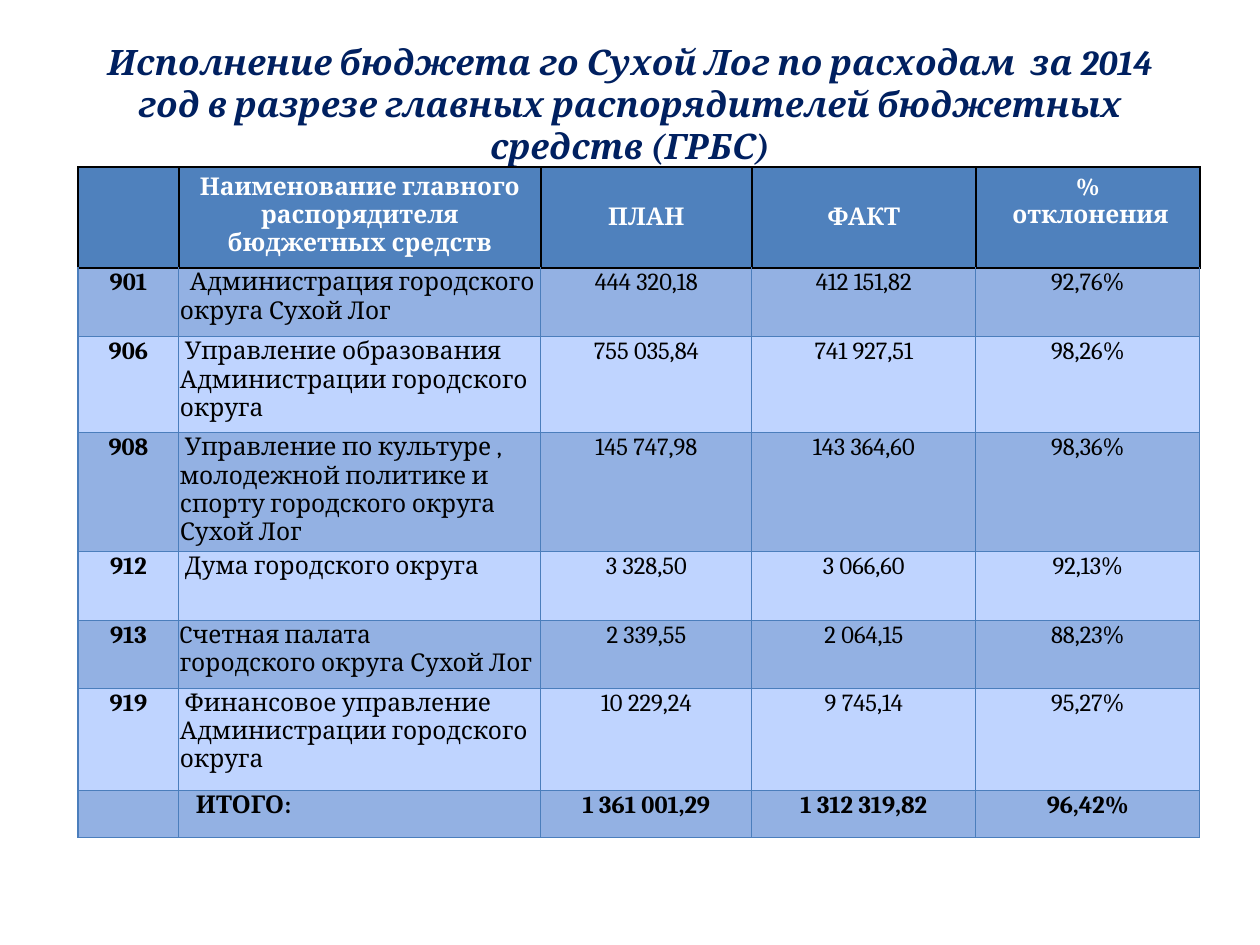
"""Build the slide on budget execution by chief budget administrators."""
import pptx
import pptx.dml.color
import pptx.enum.text
import pptx.oxml
import pptx.oxml.ns
import pptx.util

PX = 914400 // 126
COLORS = {
    "title": "002060", "header": "4F81BD", "band": "93B1E3", "plain": "BFD4FF",
    "white": "FFFFFF", "text": "000000", "grid": "4B7EBC", "header_grid": "000000",
}
CENTER = pptx.enum.text.PP_ALIGN.CENTER
LEFT = pptx.enum.text.PP_ALIGN.LEFT
TOP = pptx.enum.text.MSO_ANCHOR.TOP
MIDDLE = pptx.enum.text.MSO_ANCHOR.MIDDLE

TITLE = ("Исполнение бюджета го Сухой Лог по расходам  за 2014 год "
         "в разрезе главных распорядителей бюджетных средств (ГРБС)")
HEADINGS = ["", "Наименование главного распорядителя бюджетных средств",
            "ПЛАН", "ФАКТ", "%\n отклонения"]
ADMINISTRATORS = [
    ("901", "Администрация городского округа Сухой Лог",
     "444 320,18", "412 151,82", "92,76%"),
    ("906", "Управление образования Администрации городского округа",
     "755 035,84", "741 927,51", "98,26%"),
    ("908", "Управление по культуре , молодежной политике и спорту "
            "городского округа Сухой Лог",
     "145 747,98", "143 364,60", "98,36%"),
    ("912", "Дума городского округа", "3 328,50", "3 066,60", "92,13%"),
    ("913", "Cчетная палата\nгородского округа Сухой Лог",
     "2 339,55", "2 064,15", "88,23%"),
    ("919", "Финансовое управление Администрации городского округа",
     "10 229,24", "9 745,14", "95,27%"),
    ("", "ИТОГО:", "1 361 001,29", "1 312 319,82", "96,42%"),
]
NAME_INDENTS = [10, 5, 5, 5, 0, 5, 16]
COLUMN_WIDTHS = [101, 362, 211, 224, 224]
ROW_HEIGHTS = [97, 69, 96, 115, 69, 68, 102, 47]


def px(length):
    """Turn pixels into EMU."""
    return pptx.util.Emu(length * PX)


def rgb(name):
    """Return a named colour."""
    return pptx.dml.color.RGBColor.from_string(COLORS[name])


def apply(target, values):
    """Set each attribute of the target from a dict."""
    for name, value in values.items():
        setattr(target, name, value)


def write(frame, text, color, align, indent=0, **font):
    """Write text into a frame, one paragraph a line."""
    frame.text = text
    for paragraph in frame.paragraphs:
        paragraph.alignment = align
        if indent:
            paragraph._p.get_or_add_pPr().set("indent", str(px(indent)))
        for run in paragraph.runs:
            apply(run.font, {"name": "Cambria", **font})
            run.font.color.rgb = rgb(color)


def border(cell, side, color, points):
    """Draw one border line of a cell."""
    line = pptx.oxml.parse_xml(
        f'<a:ln{side} {pptx.oxml.ns.nsdecls("a")} w="{pptx.util.Pt(points)}">'
        f'<a:solidFill><a:srgbClr val="{COLORS[color]}"/></a:solidFill></a:ln{side}>')
    cell._tc.get_or_add_tcPr().append(line)


def style_cell(cell, fill, grid, top_grid, **layout):
    """Set the borders, fill and text layout of a cell."""
    for side in "LRTB":
        color = top_grid if side == "T" else grid
        border(cell, side, color, 1 if color == "header_grid" else 0.75)
    cell.fill.solid()
    cell.fill.fore_color.rgb = rgb(fill)
    apply(cell, layout)


def add_title(slide):
    """Add the slide title."""
    frame = slide.shapes.add_textbox(px(63), px(38), px(1134), px(130)).text_frame
    apply(frame, {"word_wrap": True, "vertical_anchor": MIDDLE})
    write(frame, TITLE, "title", CENTER,
          size=pptx.util.Pt(20), bold=True, italic=True)


def fill_header(table):
    """Fill the heading row."""
    for column, heading in enumerate(HEADINGS):
        cell = table.cell(0, column)
        anchor = MIDDLE if heading in ("ПЛАН", "ФАКТ") else TOP
        style_cell(cell, "header", "header_grid", "header_grid", vertical_anchor=anchor)
        write(cell.text_frame, heading, "white", CENTER,
              size=pptx.util.Pt(14), bold=True)


def fill_body(table):
    """Fill the rows of administrators and the total."""
    margins = {"margin_left": px(1), "margin_right": px(1),
               "margin_top": px(1), "margin_bottom": 0}
    total_row = len(ADMINISTRATORS)
    for row, (values, indent) in enumerate(zip(ADMINISTRATORS, NAME_INDENTS), 1):
        for column, value in enumerate(values):
            cell = table.cell(row, column)
            is_name = column == 1
            style_cell(cell, "band" if row % 2 else "plain", "grid",
                       "header_grid" if row == 1 else "grid", **margins)
            write(cell.text_frame, value, "text", LEFT if is_name else CENTER,
                  indent if is_name else 0, size=pptx.util.Pt(14),
                  bold=column == 0 or row == total_row)


def add_budget_table(slide):
    """Add the table of planned and actual spending."""
    table = slide.shapes.add_table(
        len(ROW_HEIGHTS), len(COLUMN_WIDTHS), px(78), px(167),
        px(sum(COLUMN_WIDTHS)), px(sum(ROW_HEIGHTS))).table
    for column, width in zip(table.columns, COLUMN_WIDTHS):
        column.width = px(width)
    for row, height in zip(table.rows, ROW_HEIGHTS):
        row.height = px(height)
    fill_header(table)
    fill_body(table)


def main():
    """Build and save the slide."""
    deck = pptx.Presentation()
    apply(deck, {"slide_width": px(1260), "slide_height": px(945)})
    slide = deck.slides.add_slide(deck.slide_layouts[6])
    add_title(slide)
    add_budget_table(slide)
    deck.save("out.pptx")


if __name__ == "__main__":
    main()
